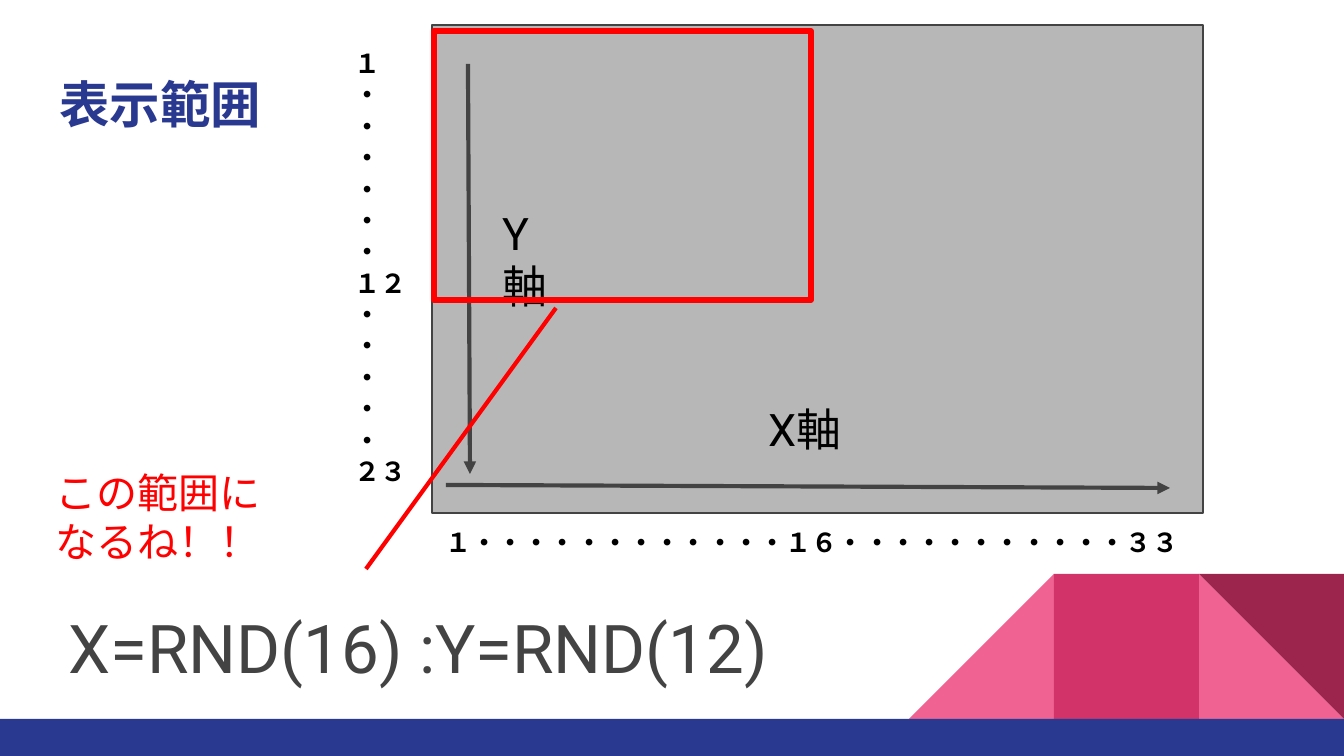
"""Build a slide that shows the display range of the X and Y axes."""
import lxml.etree
import pptx
import pptx.util
import pptx.dml.color
import pptx.enum.shapes
import pptx.enum.text
import pptx.oxml.ns

SCALE = 914400 / 134.4
FONT = "Roboto"
INSET = pptx.util.Inches(0.1)
COLORS = {
    "navy": "2A3990", "pink": "F06292", "rose": "D23369", "wine": "9C254D",
    "gray": "B7B7B7", "dark": "434343", "black": "000000", "red": "FF0000",
}
KINDS = pptx.enum.shapes.MSO_SHAPE

TILE = 145
TILE_LEFT, TILE_TOP = 909, 574
TILES = [
    (2, KINDS.RIGHT_TRIANGLE, "pink", None),
    (0, KINDS.RIGHT_TRIANGLE, "pink", "flip"),
    (1, KINDS.RECTANGLE, "rose", None),
    (2, KINDS.RIGHT_TRIANGLE, "wine", "turn"),
]
FOOTER = (0, 719, 1344, 37)
SCREEN = (432, 25, 771, 488)
RANGE = (434, 31, 377, 269)

Y_SCALE = ["１"] + ["・"] * 6 + ["１２"] + ["・"] * 5 + ["２３"]
X_SCALE = ["１" + "・" * 12 + "１６" + "・" * 11 + "３３"]
TEXTS = [
    ((46, 60, 562, 89), ["表示範囲"], 27, "navy", True),
    ((341, 34, 91, 470), Y_SCALE, 14, "black", True),
    ((432, 513, 771, 59), X_SCALE, 14, "black", True),
    ((755, 388, 126, 82), ["X軸"], 24, "black", False),
    ((489, 192, 91, 136), ["Y", "軸"], 24, "black", False),
    ((42, 454, 265, 126), ["この範囲になるね！！"], 22, "red", False),
]
FORMULA = ((55, 581, 1036, 109), ["X=RND(16) :Y=RND(12)"], 36, "dark", False)
AXES = [((446, 485), (1170, 488)), ((468, 64), (470, 474))]
POINTER = ((366, 569), (556, 308))


def px(value):
    return pptx.util.Emu(round(value * SCALE))


def rgb(name):
    return pptx.dml.color.RGBColor.from_string(COLORS[name])


def add_block(slide, kind, box, fill=None, line=None, width=0):
    shape = slide.shapes.add_shape(kind, *map(px, box))
    shape.shadow.inherit = False
    if fill:
        shape.fill.solid()
        shape.fill.fore_color.rgb = rgb(fill)
    else:
        shape.fill.background()
    if line:
        shape.line.color.rgb = rgb(line)
        shape.line.width = pptx.util.Pt(width)
    else:
        shape.line.fill.background()
    return shape


def add_text(slide, box, lines, size, color, bold):
    frame = slide.shapes.add_textbox(*map(px, box)).text_frame
    frame.word_wrap = True
    frame.vertical_anchor = pptx.enum.text.MSO_ANCHOR.TOP
    frame.margin_left = frame.margin_right = INSET
    frame.margin_top = frame.margin_bottom = INSET
    for index, line in enumerate(lines):
        paragraph = frame.add_paragraph() if index else frame.paragraphs[0]
        run = paragraph.add_run()
        run.text = line
        run.font.name = FONT
        run.font.size = pptx.util.Pt(size)
        run.font.bold = bold
        run.font.color.rgb = rgb(color)
    return frame


def add_line(slide, start, end, color, arrow=False):
    connector = slide.shapes.add_connector(
        pptx.enum.shapes.MSO_CONNECTOR.STRAIGHT, *map(px, start + end))
    connector.line.color.rgb = rgb(color)
    connector.line.width = pptx.util.Pt(2.25)
    properties = connector._element.spPr
    if arrow:
        outline = properties.find(pptx.oxml.ns.qn("a:ln"))
        lxml.etree.SubElement(
            outline, pptx.oxml.ns.qn("a:tailEnd"), type="triangle")
    lxml.etree.SubElement(properties, pptx.oxml.ns.qn("a:effectLst"))


def main():
    presentation = pptx.Presentation()
    presentation.slide_width, presentation.slide_height = px(1344), px(756)
    slide = presentation.slides.add_slide(presentation.slide_layouts[6])

    for column, kind, color, change in TILES:
        box = (TILE_LEFT + column * TILE, TILE_TOP, TILE, TILE)
        shape = add_block(slide, kind, box, color)
        if change == "flip":
            shape._element.spPr.find(pptx.oxml.ns.qn("a:xfrm")).set("flipH", "1")
        elif change == "turn":
            shape.rotation = 180
    add_block(slide, KINDS.RECTANGLE, FOOTER, "navy")
    add_block(slide, KINDS.RECTANGLE, SCREEN, "gray", "dark", 0.75)

    for start, end in AXES:
        add_line(slide, start, end, "dark", arrow=True)
    for entry in TEXTS:
        add_text(slide, *entry)
    formula = add_text(slide, *FORMULA).paragraphs[0]
    formula.line_spacing = 1.15
    formula.space_after = pptx.util.Pt(12)

    add_block(slide, KINDS.RECTANGLE, RANGE, None, "red", 3)
    add_line(slide, *POINTER, "red")
    presentation.save("out.pptx")


if __name__ == "__main__":
    main()
